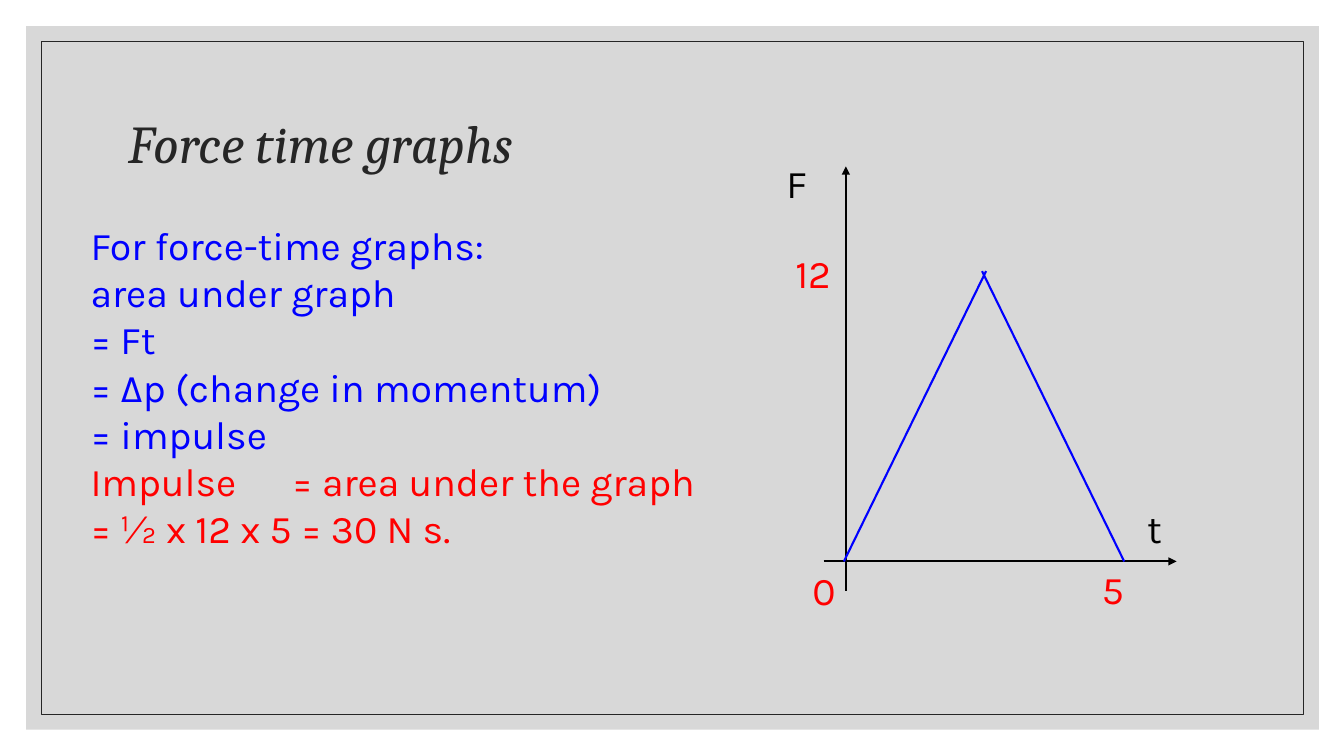
from lxml import etree
from pptx import Presentation
from pptx.dml.color import RGBColor
from pptx.enum import shapes, text
from pptx.oxml import ns
from pptx.util import Pt

PX = 9144  # EMU per px, 100 px to the inch
BLACK = RGBColor(0, 0, 0)
DARK = RGBColor(0x26, 0x26, 0x26)
GREY = RGBColor(0xBF, 0xBF, 0xBF)
BLUE = RGBColor(0, 0, 0xFF)
RED = RGBColor(0xFF, 0, 0)
TITLE_FONT = {"name": "Cambria", "size": Pt(38), "italic": True}
BODY_FONT = {"name": "Karla", "size": Pt(28)}


def px(*lengths):
    return [n * PX for n in lengths]


def write(p, words, font, color):
    r = p.add_run()
    r.text = words
    for key, value in font.items():
        setattr(r.font, key, value)
    r.font.color.rgb = color


def add_box(parent, box):
    tf = parent.add_textbox(*px(*box)).text_frame
    tf.word_wrap = True
    return tf


def add_line(group, start, end, color, arrow=False):
    line = group.add_connector(shapes.MSO_CONNECTOR.STRAIGHT, *px(*start, *end))
    line.line.color.rgb = color
    line.line.width = Pt(1.5)
    if arrow:
        etree.SubElement(line.line._get_or_add_ln(), ns.qn("a:tailEnd"), type="triangle")
    etree.SubElement(line._element.spPr, ns.qn("a:effectLst"))


def add_frame(s, box, inset):
    # Translucent panel with a thin border inside it
    x, y, w, h = box
    panel = s.shapes.add_shape(shapes.MSO_SHAPE.RECTANGLE, *px(*box))
    panel.fill.solid()
    panel.fill.fore_color.rgb = GREY
    color = panel._element.spPr.find(".//" + ns.qn("a:srgbClr"))
    etree.SubElement(color, ns.qn("a:alpha"), val="60000")
    panel.line.fill.background()
    border = s.shapes.add_shape(
        shapes.MSO_SHAPE.RECTANGLE,
        *px(x + inset, y + inset, w - 2 * inset, h - 2 * inset))
    border.fill.background()
    border.line.color.rgb = DARK
    border.line.width = Pt(0.5)
    for sp in (panel, border):
        sp.shadow.inherit = False


def add_title(s, box, words):
    title = s.shapes.title
    title.left, title.top, title.width, title.height = px(*box)
    tree = title._element.getparent()
    tree.append(title._element)  # in front of the frame
    tf = title.text_frame
    tf.auto_size = text.MSO_AUTO_SIZE.NONE
    tf.vertical_anchor = text.MSO_ANCHOR.MIDDLE
    p = tf.paragraphs[0]
    p.alignment = text.PP_ALIGN.LEFT
    p.line_spacing = 0.9
    write(p, words, TITLE_FONT, DARK)


def add_graph(s, box):
    x, y, w, h = box
    group = s.shapes.add_group_shape().shapes
    base, axis_x = y + 392, x + 69
    # Axes
    add_line(group, (axis_x, y + h), (axis_x, y), BLACK, arrow=True)
    add_line(group, (x + 47, base), (x + w, base), BLACK, arrow=True)
    # Force rises and falls; the two sides cross just at the peak
    for foot, peak in ((67, 208), (345, 204)):
        add_line(group, (x + foot, base), (x + peak, y + 104), BLUE)
    # Axis names and values
    for words, left, top, width, color in (
            ("t", 358, 323, 88, BLACK), ("F", 0, -19, 61, BLACK),
            ("5", 313, 384, 61, RED), ("12", 9, 70, 83, RED),
            ("0", 26, 385, 86, RED)):
        p = add_box(group, (x + left, y + top, width, 84)).paragraphs[0]
        p.line_spacing = 1.15
        write(p, words, BODY_FONT, color)


def add_explanation(s, box, lines):
    tf = add_box(s.shapes, box)
    for i, (words, color) in enumerate(lines):
        p = tf.add_paragraph() if i else tf.paragraphs[0]
        write(p, words, BODY_FONT, color)


def main():
    prs = Presentation()
    prs.slide_width, prs.slide_height = px(1333, 750)
    s = prs.slides.add_slide(prs.slide_layouts[5])
    add_frame(s, (26, 26, 1282, 698), 15)
    add_title(s, (117, 70, 1100, 150), "Force time graphs")
    add_graph(s, (770, 165, 397, 421))
    add_explanation(s, (80, 215, 667, 340), (
        ("For force-time graphs:", BLUE),
        ("area under graph", BLUE),
        ("= Ft", BLUE),
        ("= Δp (change in momentum)", BLUE),
        ("= impulse", BLUE),
        ("Impulse \t= area under the graph", RED),
        ("= ½ x 12 x 5 = 30 N s.", RED)))
    prs.save("out.pptx")


if __name__ == "__main__":
    main()
